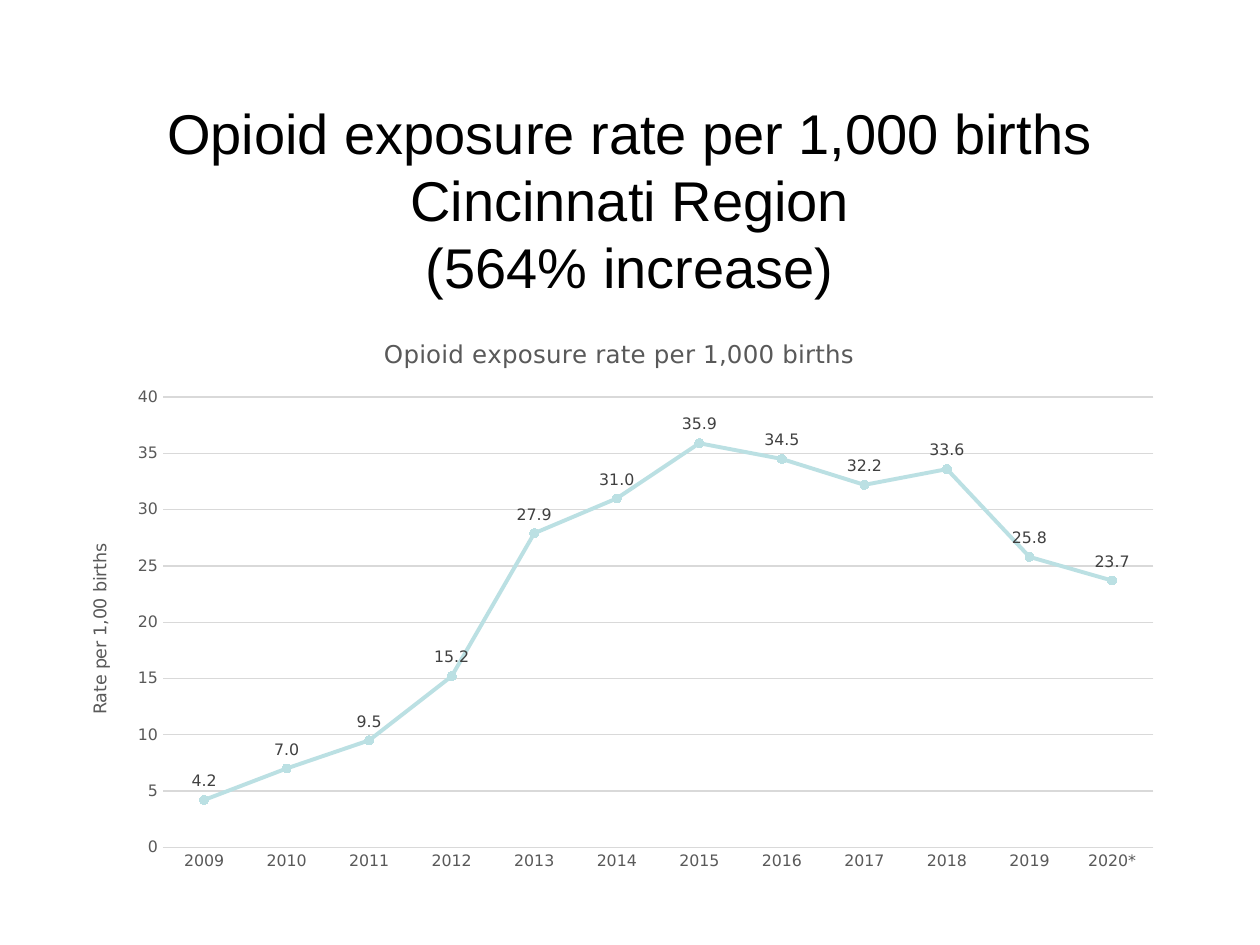
"""Build a slide with a line chart of opioid exposure rates."""
import pptx
import pptx.chart.data
import pptx.dml.color
import pptx.enum.chart
import pptx.enum.text
import pptx.util
from pptx.util import Inches


def set_font(font, size, color, name="DejaVu Sans"):
    font.size = pptx.util.Pt(size)
    font.name = name
    font.bold = False
    font.color.rgb = rgb(color)


def rgb(color):
    return pptx.dml.color.RGBColor.from_string(color)


prs = pptx.Presentation()
prs.slide_width, prs.slide_height = Inches(10), Inches(7.5)
s = prs.slides.add_slide(prs.slide_layouts[5])

title = s.shapes.title
title.left, title.top = Inches(0), Inches(0.83)
title.width, title.height = Inches(10), Inches(1.5)
tf = title.text_frame
tf.text = "Opioid exposure rate per 1,000 births\vCincinnati Region\v(564% increase)"
tf.auto_size = pptx.enum.text.MSO_AUTO_SIZE.NONE
tf.vertical_anchor = pptx.enum.text.MSO_ANCHOR.MIDDLE
p = tf.paragraphs[0]
p.alignment = pptx.enum.text.PP_ALIGN.CENTER
set_font(p.font, 32, "000000", "Arial")

data = pptx.chart.data.CategoryChartData()
data.categories = [str(year) for year in range(2009, 2020)] + ["2020*"]
data.add_series("Series 1", [4.2, 7, 9.5, 15.2, 27.9, 31, 35.9, 34.5, 32.2, 33.6, 25.8, 23.7])
chart = s.shapes.add_chart(
    pptx.enum.chart.XL_CHART_TYPE.LINE_MARKERS,
    Inches(0.5), Inches(2.5), Inches(8.83), Inches(4.5), data,
).chart
set_font(chart.font, 10, "000000")
chart.has_legend = False
chart.has_title = True
chart.chart_title.include_in_layout = False

cat_axis, val_axis = chart.category_axis, chart.value_axis
for axis in (cat_axis, val_axis):
    axis.major_tick_mark = pptx.enum.chart.XL_TICK_MARK.NONE
    axis.minor_tick_mark = pptx.enum.chart.XL_TICK_MARK.NONE
    set_font(axis.tick_labels.font, 9, "595959")
val_axis.minimum_scale, val_axis.maximum_scale, val_axis.major_unit = 0, 40, 5
val_axis.tick_labels.number_format = "General"
val_axis.tick_labels.number_format_is_linked = False
val_axis.format.line.fill.background()
val_axis.has_major_gridlines = True
for line in (cat_axis.format.line, val_axis.major_gridlines.format.line):
    line.color.rgb = rgb("D9D9D9")
    line.width = pptx.util.Pt(0.75)

for holder, text, size in (
    (chart.chart_title, "Opioid exposure rate per 1,000 births", 14),
    (val_axis.axis_title, "Rate per 1,00 births", 10),
):
    holder.text_frame.text = text
    set_font(holder.text_frame.paragraphs[0].font, size, "595959")

plot = chart.plots[0]
plot.vary_by_categories = False
rates = plot.series[0]
rates.smooth = False
rates.format.line.color.rgb = rgb("BBE0E3")
rates.format.line.width = pptx.util.Pt(2.25)
rates.marker.style = pptx.enum.chart.XL_MARKER_STYLE.CIRCLE
rates.marker.size = 5
for fill in (rates.marker.format.fill, rates.marker.format.line.fill):
    fill.solid()
    fill.fore_color.rgb = rgb("BBE0E3")

labels = rates.data_labels
labels.show_value = True
labels.position = pptx.enum.chart.XL_LABEL_POSITION.ABOVE
labels.number_format = "0.0"
labels.number_format_is_linked = False
set_font(labels.font, 9, "404040")

prs.save("out.pptx")
